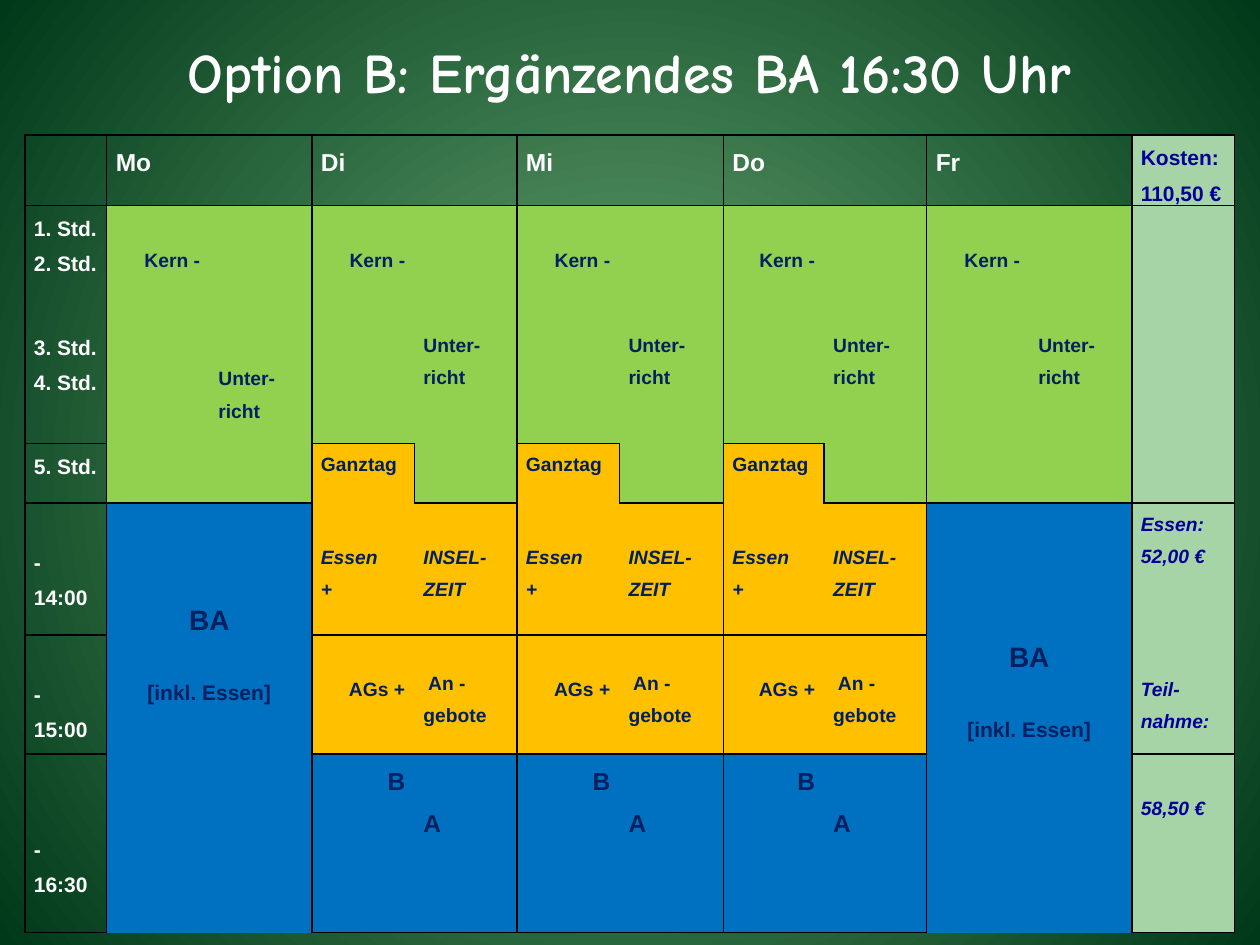
"""Build the weekly timetable slide for option B."""
from lxml.etree import SubElement
from pptx import Presentation
from pptx.dml.color import RGBColor as RGB
from pptx.enum.text import MSO_ANCHOR as Anchor, PP_ALIGN as Align
from pptx.oxml.ns import qn
from pptx.util import Pt

THEME = {
    "white": "FFFFFF", "navy": "002060", "cost": "000099", "line": "000000",
    "green": "92D050", "orange": "FFC000", "blue": "0070C0", "mint": "A6D4A7",
    "glow": "6AA974", "edge": "003919",
    "title": 32, "large": 16, "head": 14, "body": 12, "small": 11,
    "font": "Arial", "title_font": "Comic Neue",
}
LINE_11, LINE_12, LINE_14 = 19, 20.7, 24.1

TITLE = "Option B: Ergänzendes BA 16:30 Uhr"
DAYS = ["Mo", "Di", "Mi", "Do", "Fr"]
COLS = [46.8] + [58.6] * 5 + [59.4, 57.6] + [58.6] * 4
ROWS = [40, 68, 68, 34, 75.5, 68, 102]
REGIONS = [
    "tmmddiiooffk",
    "uAABBCCDDEEn",
    "uAABBCCDDEEn",
    "vAAFBGCHDEEn",
    "wXXFFGGHHYYp",
    "xXXJJKKLLYYp",
    "yXXPPQQRRYYq",
]
FILLS = {"green": "ABCDE", "orange": "FGHJKL", "blue": "XYPQR", "mint": "knpq"}
TIMES = {
    1: ("1. Std.\n2. Std.", 0), 2: ("3. Std.\n4. Std.", 0), 3: ("5. Std.", 0),
    4: ("- 14:00", LINE_12), 5: ("- 15:00", LINE_12), 6: ("- 16:30", 2 * LINE_12),
}
COSTS = {
    0: ("Kosten:\n110,50 €", 0, "body", False),
    4: ("Essen:\n52,00 €", 0, "small", True),
    5: ("Teil-\vnahme:", LINE_11, "small", True),
    6: ("58,50 €", LINE_11, "small", True),
}
FULL_DAY = [
    (3, 0, "Ganztag", {}),
    (4, 0, "Essen\v+", {"top": LINE_11, "italic": True}),
    (4, 1, "INSEL-ZEIT", {"top": LINE_11, "italic": True}),
    (5, 0, "AGs +", {"top": LINE_11, "align": Align.RIGHT}),
    (5, 1, " An -\vgebote", {"anchor": Anchor.MIDDLE}),
    (6, 0, "B", {"size": "head", "align": Align.RIGHT}),
    (6, 1, "A", {"size": "head", "top": LINE_14}),
]
CARE_BOTTOM = {"Mo": 81, "Fr": 38}


def style(p, size, color, font="font", italic=False):
    for r in p.runs:
        r.font.name, r.font.size = THEME[font], Pt(THEME[size])
        r.font.bold, r.font.italic = True, italic
        r.font.color.rgb = RGB.from_string(THEME[color])


def write(cell, text, size="small", color="navy", top=0, align=Align.LEFT,
          anchor=Anchor.TOP, italic=False):
    cell.text_frame.text = text
    cell.margin_top, cell.vertical_anchor = Pt(top), anchor
    for p in cell.text_frame.paragraphs:
        p.alignment, p.line_spacing = align, 1.5
        style(p, size, color, italic=italic)


def add_border(cell, side, visible):
    ln = SubElement(cell._tc.get_or_add_tcPr(), qn("a:ln" + side), w=str(Pt(1)))
    if visible:
        fill = SubElement(ln, qn("a:solidFill"))
        SubElement(fill, qn("a:srgbClr"), val=THEME["line"])
    else:
        SubElement(ln, qn("a:noFill"))


def region(row, col):
    inside = 0 <= row < len(ROWS) and 0 <= col < len(COLS)
    return REGIONS[row][col] if inside else None


def format_cell(cell, row, col):
    here = region(row, col)
    for side, dr, dc in (("L", 0, -1), ("R", 0, 1), ("T", -1, 0), ("B", 1, 0)):
        add_border(cell, side, region(row + dr, col + dc) != here)
    name = next((n for n, letters in FILLS.items() if here in letters), None)
    if name:
        cell.fill.solid()
        cell.fill.fore_color.rgb = RGB.from_string(THEME[name])
    else:
        cell.fill.background()
    cell.margin_left = cell.margin_right = Pt(5.2)
    cell.margin_top = cell.margin_bottom = 0


def set_background(s):
    fill = s.background.fill
    fill.gradient()
    for stop, name in zip(fill.gradient_stops, ("glow", "edge")):
        stop.color.rgb = RGB.from_string(THEME[name])
    for stop, position in zip(fill.gradient_stops, (0, 1)):
        stop.position = position
    grad = s.element.find(".//" + qn("a:gradFill"))
    grad.remove(grad.find(qn("a:lin")))
    radial = SubElement(grad, qn("a:path"), path="circle")
    SubElement(radial, qn("a:fillToRect"), l="50000", t="50000", r="50000", b="50000")


def add_title(s):
    sp = s.shapes.title
    sp.left, sp.top, sp.width, sp.height = Pt(54), Pt(9.4), Pt(612), Pt(62.6)
    tf = sp.text_frame
    tf.text, tf.vertical_anchor = TITLE, Anchor.MIDDLE
    tf.paragraphs[0].alignment = Align.CENTER
    style(tf.paragraphs[0], "title", "white", "title_font")


def add_timetable(s):
    frame = s.shapes.add_table(len(ROWS), len(COLS), Pt(14.2), Pt(77.2),
                               Pt(sum(COLS)), Pt(sum(ROWS)))
    table = frame.table
    table.first_row = table.horz_banding = False
    for column, width in zip(table.columns, COLS):
        column.width = Pt(width)
    for row, height in zip(table.rows, ROWS):
        row.height = Pt(height)
    for row in range(len(ROWS)):
        for col in range(len(COLS)):
            format_cell(table.cell(row, col), row, col)
    return table


def fill_day(table, day, col):
    write(table.cell(0, col), day, "head", "white")
    write(table.cell(1, col), "Kern -", top=LINE_11, align=Align.RIGHT)
    write(table.cell(2, col + 1), "Unter-richt", top=LINE_11 if day == "Mo" else 0)
    if day not in CARE_BOTTOM:
        for row, half, text, options in FULL_DAY:
            write(table.cell(row, col + half), text, **options)
        return
    care = table.cell(4, col)
    care.merge(table.cell(6, col + 1))
    write(care, "BA\n[inkl. Essen]", "body", align=Align.CENTER, anchor=Anchor.MIDDLE)
    care.margin_bottom = Pt(CARE_BOTTOM[day])
    first, second = care.text_frame.paragraphs
    style(first, "large", "navy")
    second.space_before = Pt(LINE_11)


def main():
    prs = Presentation()
    prs.slide_width, prs.slide_height = Pt(720), Pt(540)
    s = prs.slides.add_slide(prs.slide_layouts[5])
    set_background(s)
    add_title(s)
    table = add_timetable(s)
    for i, day in enumerate(DAYS):
        fill_day(table, day, 1 + 2 * i)
    for row, (text, top) in TIMES.items():
        write(table.cell(row, 0), text, "body", "white", top)
    for row, (text, top, size, italic) in COSTS.items():
        write(table.cell(row, len(COLS) - 1), text, size, "cost", top, italic=italic)
    prs.save("out.pptx")


if __name__ == "__main__":
    main()
